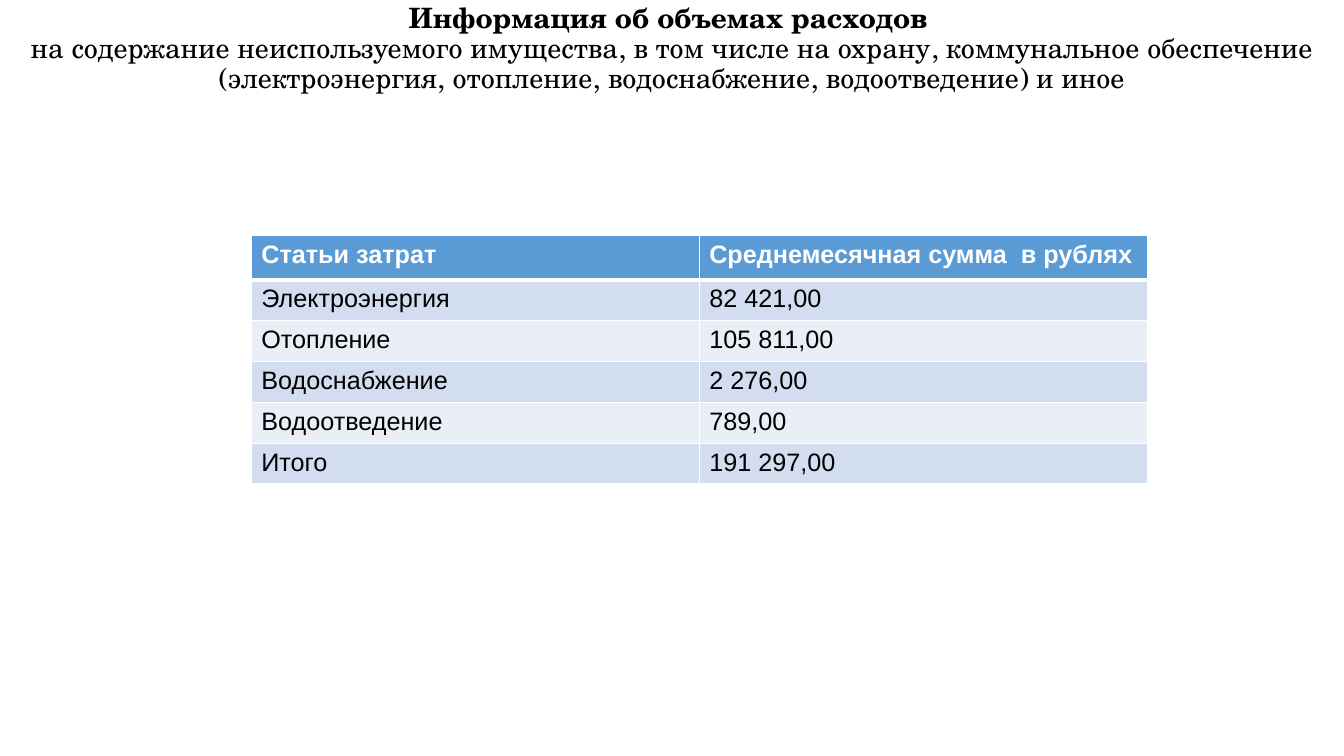
from dataclasses import dataclass

from lxml import etree
from pptx import Presentation
from pptx.dml.color import RGBColor
from pptx.enum.text import MSO_ANCHOR, MSO_AUTO_SIZE, PP_ALIGN
from pptx.oxml.ns import qn
from pptx.util import Pt

CENTER = PP_ALIGN.CENTER
MIDDLE = MSO_ANCHOR.MIDDLE
NO_AUTOFIT = MSO_AUTO_SIZE.NONE
TITLE_ONLY = 5

COLORS = {
    "text": "000000",
    "white": "FFFFFF",
    "header": "5B9BD5",
    "odd": "D2DEEF",
    "even": "EAEFF7",
}
TITLE_FONT = "TeX Gyre Schola"
TABLE_FONT = "Arial"

TABLE_LEFT, TABLE_TOP = 179.5, 168
COLUMN_WIDTH = 320
HEADER_HEIGHT, ROW_HEIGHT = 31.8, 29.2
THIN, THICK = 1, 3


@dataclass
class Expense:
    item: str
    amount: str


HEADER = Expense("Статьи затрат", "Среднемесячная сумма  в рублях")
EXPENSES = [
    Expense("Электроэнергия", "82 421,00"),
    Expense("Отопление", "105 811,00"),
    Expense("Водоснабжение", "2 276,00"),
    Expense("Водоотведение", "789,00"),
    Expense("Итого", "191 297,00"),
]


def add_text(para, text: str, *, font: str, size: float,
             color: str = "text", bold: bool = False) -> None:
    span = para.add_run()
    span.text = text
    span.font.name = font
    span.font.size = Pt(size)
    span.font.bold = bold
    span.font.color.rgb = RGBColor.from_string(COLORS[color])


def set_borders(cell, top: float, bottom: float) -> None:
    properties = cell._tc.get_or_add_tcPr()
    widths = {"a:lnL": THIN, "a:lnR": THIN, "a:lnT": top, "a:lnB": bottom}
    for tag, width in widths.items():
        line = etree.SubElement(properties, qn(tag), w=str(Pt(width)))
        fill = etree.SubElement(line, qn("a:solidFill"))
        etree.SubElement(fill, qn("a:srgbClr"), val=COLORS["white"])


def add_title(page) -> None:
    title = page.shapes.title
    title.left, title.top, title.width, title.height = Pt(0), Pt(0), Pt(960), Pt(70.5)
    frame = title.text_frame
    frame.word_wrap = True
    frame.auto_size = NO_AUTOFIT
    frame.vertical_anchor = MIDDLE
    para = frame.paragraphs[0]
    para.alignment = CENTER
    para.line_spacing = 0.9
    add_text(para, "Информация об объемах расходов ", font=TITLE_FONT, size=20, bold=True)
    para.add_line_break()
    add_text(para, "на содержание неиспользуемого имущества, в том числе на охрану, "
             "коммунальное обеспечение (электроэнергия, отопление, водоснабжение, "
             "водоотведение) и иное", font=TITLE_FONT, size=20)


def add_expense_table(page, expenses: list[Expense]) -> None:
    rows = [HEADER, *expenses]
    height = HEADER_HEIGHT + ROW_HEIGHT * len(expenses)
    table = page.shapes.add_table(len(rows), 2, Pt(TABLE_LEFT), Pt(TABLE_TOP),
                                  Pt(2 * COLUMN_WIDTH), Pt(height)).table
    for column in table.columns:
        column.width = Pt(COLUMN_WIDTH)
    for index, expense in enumerate(rows):
        is_header = index == 0
        table.rows[index].height = Pt(HEADER_HEIGHT if is_header else ROW_HEIGHT)
        band = "header" if is_header else "odd" if index % 2 else "even"
        for column, text in enumerate((expense.item, expense.amount)):
            cell = table.cell(index, column)
            set_borders(cell, top=THICK if index == 1 else THIN,
                        bottom=THICK if is_header else THIN)
            cell.fill.solid()
            cell.fill.fore_color.rgb = RGBColor.from_string(COLORS[band])
            add_text(cell.text_frame.paragraphs[0], text, font=TABLE_FONT, size=18,
                     color="white" if is_header else "text", bold=is_header)


def main() -> None:
    deck = Presentation()
    deck.slide_width, deck.slide_height = Pt(960), Pt(540)
    page = deck.slides.add_slide(deck.slide_layouts[TITLE_ONLY])

    # Heading
    add_title(page)

    # Monthly expenses
    add_expense_table(page, EXPENSES)

    deck.save("out.pptx")


if __name__ == "__main__":
    main()
